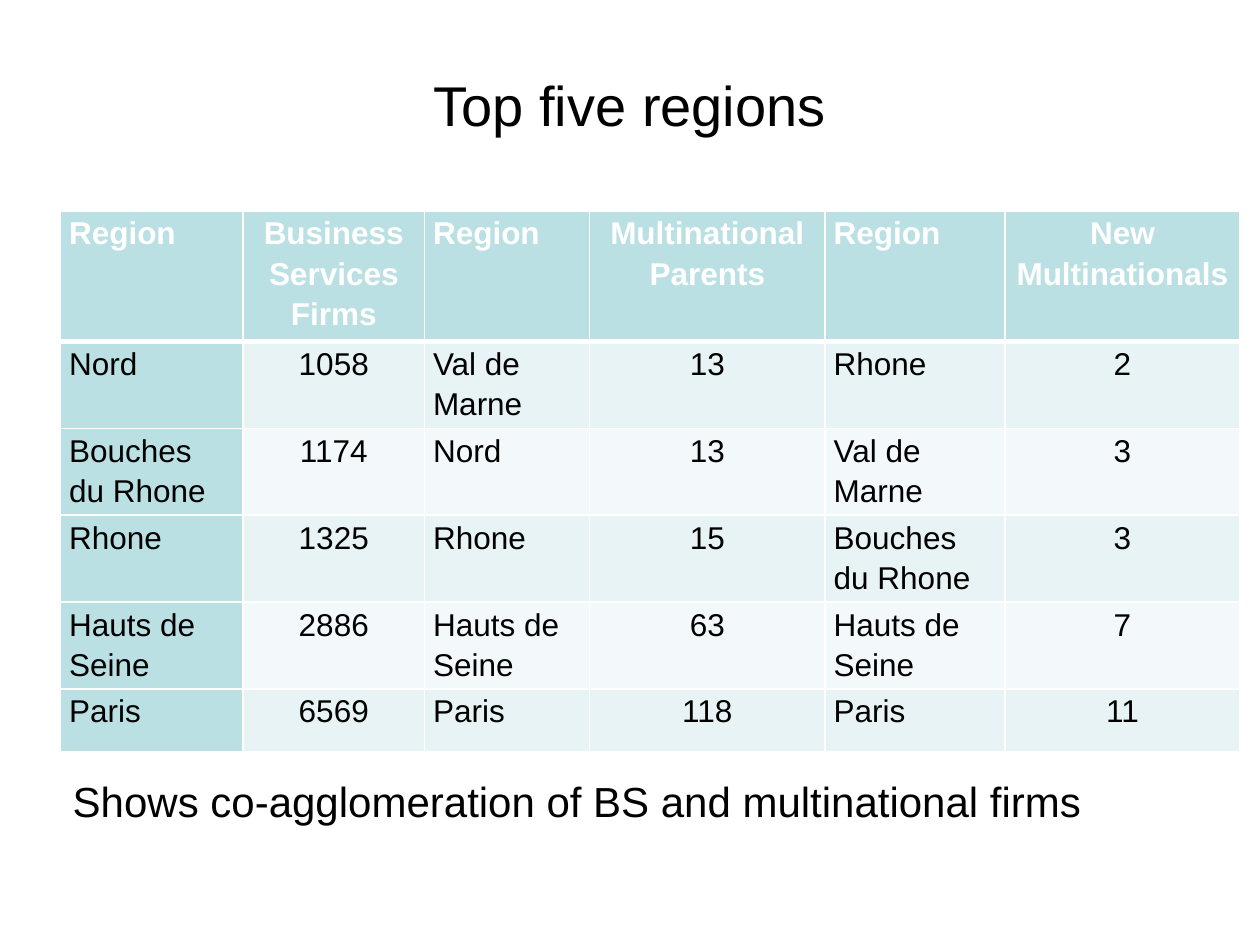
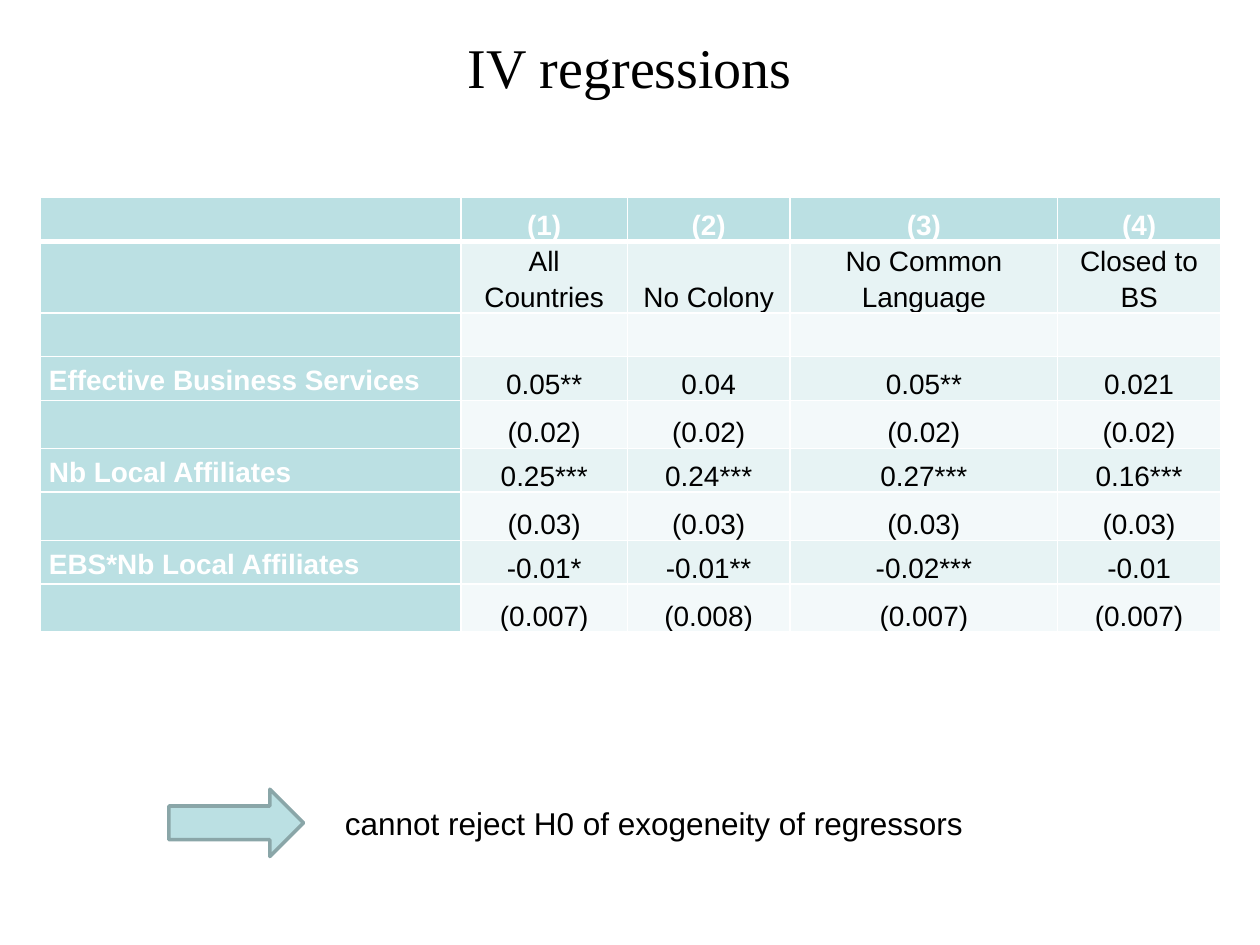
from lxml import etree
from pptx import Presentation
from pptx.dml.color import RGBColor
from pptx.enum import shapes, text
from pptx.oxml import ns
from pptx.util import Pt

TEAL, BAND, PALE = "BBE0E3", "E7F3F4", "F3F9FA"
WHITE, BLACK, EDGE = "FFFFFF", "000000", "8AA6A8"
SANS, SERIF = "Arial", "Times New Roman"
LEFT, CENTER = text.PP_ALIGN.LEFT, text.PP_ALIGN.CENTER
TOP, MIDDLE, BOTTOM = text.MSO_ANCHOR.TOP, text.MSO_ANCHOR.MIDDLE, text.MSO_ANCHOR.BOTTOM

REGIONS = [
    ("Region", "Business Services Firms", "Region", "Multinational Parents", "Region", "New Multinationals"),
    ("Nord", "1058", "Val de Marne", "13", "Rhone", "2"),
    ("Bouches du Rhone", "1174", "Nord", "13", "Val de Marne", "3"),
    ("Rhone", "1325", "Rhone", "15", "Bouches du Rhone", "3"),
    ("Hauts de Seine", "2886", "Hauts de Seine", "63", "Hauts de Seine", "7"),
    ("Paris", "6569", "Paris", "118", "Paris", "11"),
]
REGION_COLS = [104.5, 103.5, 94.5, 134.5, 103, 134]
REGION_ROWS = [74] + [36] * 5

REGRESSIONS = [
    ("", "(1)", "(2)", "(3)", "(4)"),
    ("", "All Countries", "No Colony", "No Common Language", "Closed to BS"),
    ("", "", "", "", ""),
    ("Effective Business Services", "0.05**", "0.04", "0.05**", "0.021"),
    ("", "(0.02)", "(0.02)", "(0.02)", "(0.02)"),
    ("Nb Local Affiliates", "0.25***", "0.24***", "0.27***", "0.16***"),
    ("", "(0.03)", "(0.03)", "(0.03)", "(0.03)"),
    ("EBS*Nb Local Affiliates", "-0.01*", "-0.01**", "-0.02***", "-0.01"),
    ("", "(0.007)", "(0.008)", "(0.007)", "(0.007)"),
]
REGRESSION_COLS = [240.5, 95, 93, 153, 93]
REGRESSION_ROWS = [25, 27.5, 25] + [25, 27.5] * 3


def rgb(color):
    return RGBColor.from_string(color)


def write(p, words, size, font=SANS, color=BLACK, bold=False, align=LEFT):
    p.alignment = align
    r = p.add_run()
    r.text = words
    r.font.name, r.font.size, r.font.bold = font, Pt(size), bold
    r.font.color.rgb = rgb(color)


def add_slide(prs, title, top, font):
    s = prs.slides.add_slide(prs.slide_layouts[5])
    sp = s.shapes.title
    sp.left, sp.top, sp.width, sp.height = Pt(0), Pt(top), Pt(720), Pt(75.5)
    tf = sp.text_frame
    tf.auto_size = text.MSO_AUTO_SIZE.NONE
    tf.vertical_anchor = MIDDLE
    write(tf.paragraphs[0], title, 32, font, align=CENTER)
    return s


def add_note(s, words, left, top, width, height, size, wrap):
    tf = s.shapes.add_textbox(Pt(left), Pt(top), Pt(width), Pt(height)).text_frame
    tf.word_wrap = wrap
    tf.auto_size = text.MSO_AUTO_SIZE.SHAPE_TO_FIT_TEXT
    write(tf.paragraphs[0], words, size)


def set_borders(cell, row):
    widths = {"lnL": 1, "lnR": 1, "lnT": 3 if row == 1 else 1, "lnB": 3 if row == 0 else 1}
    for tag, width in widths.items():
        ln = etree.SubElement(cell._tc.get_or_add_tcPr(), ns.qn("a:" + tag), w=str(Pt(width)))
        fill = etree.SubElement(ln, ns.qn("a:solidFill"))
        etree.SubElement(fill, ns.qn("a:srgbClr"), val=WHITE)


def add_grid(s, rows, left, top, widths, heights, size, style):
    frame = s.shapes.add_table(len(rows), len(widths), Pt(left), Pt(top), Pt(sum(widths)), Pt(sum(heights)))
    table = frame.table
    for column, width in zip(table.columns, widths):
        column.width = Pt(width)
    for i, values in enumerate(rows):
        table.rows[i].height = Pt(heights[i])
        for j, value in enumerate(values):
            cell = table.cell(i, j)
            cell.margin_left = cell.margin_right = Pt(5)
            cell.margin_top = cell.margin_bottom = Pt(0)
            set_borders(cell, i)
            cell.fill.solid()
            cell.fill.fore_color.rgb = rgb(TEAL if i == 0 or j == 0 else BAND if i % 2 else PALE)
            align, cell.vertical_anchor, strong = style(i, j)
            p = cell.text_frame.paragraphs[0]
            p.line_spacing = 1.15
            if value:
                write(p, value, size, color=WHITE if strong else BLACK, bold=strong, align=align)


def region_style(row, col):
    return CENTER if col % 2 else LEFT, TOP, row == 0


def regression_style(row, col):
    return (CENTER, BOTTOM, row == 0) if col else (LEFT, MIDDLE, True)


def add_arrow(s, left, top, width, height):
    sp = s.shapes.add_shape(shapes.MSO_SHAPE.RIGHT_ARROW, Pt(left), Pt(top), Pt(width), Pt(height))
    sp.shadow.inherit = False
    sp.fill.solid()
    sp.fill.fore_color.rgb = rgb(TEAL)
    sp.line.color.rgb = rgb(EDGE)
    sp.line.width = Pt(2)


def main():
    prs = Presentation()
    prs.slide_width, prs.slide_height = Pt(720), Pt(540)

    s = add_slide(prs, "Top five regions", 22, SANS)
    add_note(s, "Shows co-agglomeration of BS and multinational firms", 34.5, 439.5, 654, 36, 24, True)
    add_grid(s, REGIONS, 34.5, 120.5, REGION_COLS, REGION_ROWS, 18, region_style)

    s = add_slide(prs, "IV regressions", 0, SERIF)
    add_grid(s, REGRESSIONS, 23, 113, REGRESSION_COLS, REGRESSION_ROWS, 16, regression_style)
    add_note(s, "cannot reject H0 of exogeneity of regressors", 190, 456, 375, 29, 18, False)
    add_arrow(s, 96.5, 451, 77, 38.5)

    prs.save("out.pptx")


if __name__ == "__main__":
    main()
